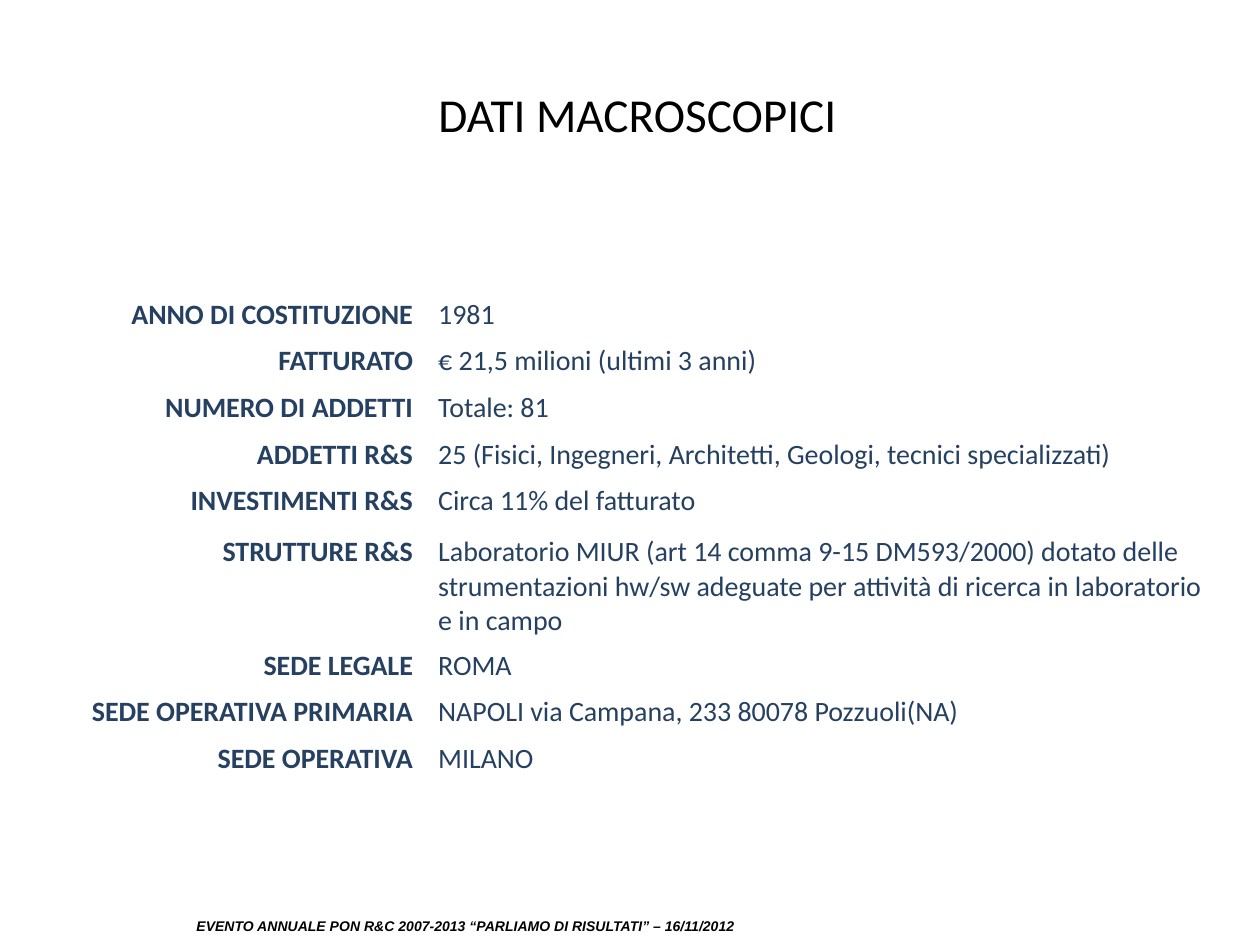
"""Build the slide with the company's headline data."""
from pptx import Presentation
from pptx.dml.color import RGBColor
from pptx.enum.text import MSO_ANCHOR, MSO_AUTO_SIZE, PP_ALIGN
from pptx.util import Cm, Pt

LEFT, RIGHT = PP_ALIGN.LEFT, PP_ALIGN.RIGHT
TOP, MIDDLE = MSO_ANCHOR.TOP, MSO_ANCHOR.MIDDLE
FIT_SHAPE = MSO_AUTO_SIZE.SHAPE_TO_FIT_TEXT

COLORS = {"text": "000000", "table": "254061"}
COLUMN_WIDTHS = (7.49, 16.13)
ROW_HEIGHT = 0.94
TALL_ROW, TALL_HEIGHT = 4, 1.03
COMPANY_DATA = [
    ("ANNO DI COSTITUZIONE", "1981"),
    ("FATTURATO", "€ 21,5 milioni (ultimi 3 anni)"),
    ("NUMERO DI ADDETTI", "Totale: 81"),
    ("ADDETTI R&S", "25 (Fisici, Ingegneri, Architetti, Geologi, tecnici specializzati)"),
    ("INVESTIMENTI R&S", "Circa 11% del fatturato"),
    ("STRUTTURE R&S", "Laboratorio MIUR (art 14 comma 9-15 DM593/2000) dotato delle "
     "strumentazioni hw/sw adeguate per attività di ricerca in laboratorio e in campo"),
    ("SEDE LEGALE", "ROMA"),
    ("SEDE OPERATIVA PRIMARIA", "NAPOLI via Campana, 233 80078 Pozzuoli(NA)"),
    ("SEDE OPERATIVA", "MILANO"),
]


def add_run(paragraph, text, size, color, font="Calibri", bold=False, italic=False):
    """Append a formatted run to a paragraph."""
    run = paragraph.add_run()
    run.text = text
    run.font.name = font
    run.font.size = Pt(size)
    run.font.bold = bold
    run.font.italic = italic
    run.font.color.rgb = RGBColor.from_string(COLORS[color])


def add_text_box(slide, left, top, width, height, anchor=TOP):
    """Add a wrapping text box and return its text frame."""
    shape = slide.shapes.add_textbox(Cm(left), Cm(top), Cm(width), Cm(height))
    text_frame = shape.text_frame
    text_frame.word_wrap = True
    text_frame.vertical_anchor = anchor
    return text_frame


def add_title(slide):
    """Add the slide title."""
    text_frame = add_text_box(slide, 8.59, 1.55, 9.8, 1.5, MIDDLE)
    add_run(text_frame.paragraphs[0], "DATI MACROSCOPICI", 27, "text")


def add_footer(slide):
    """Add the event line at the bottom."""
    text_frame = add_text_box(slide, 3.71, 18.36, 11.91, 0.61)
    text_frame.auto_size = FIT_SHAPE
    paragraph = text_frame.paragraphs[0]
    paragraph.line_spacing = Pt(10)
    add_run(paragraph, "EVENTO ANNUALE PON R&C 2007-2013 “PARLIAMO DI RISULTATI” – 16/11/2012",
            8, "text", "Arial", bold=True, italic=True)


def fill_cell(cell, text, alignment, bold):
    """Write one table cell without a background."""
    cell.fill.background()
    paragraph = cell.text_frame.paragraphs[0]
    paragraph.alignment = alignment
    add_run(paragraph, text, 16, "table", bold=bold)


def add_data_table(slide):
    """Add the two-column table of labels and values."""
    row_count = len(COMPANY_DATA)
    table = slide.shapes.add_table(
        row_count, len(COLUMN_WIDTHS), Cm(1.09), Cm(5.87),
        Cm(sum(COLUMN_WIDTHS)), Cm(row_count * ROW_HEIGHT)).table
    table.first_row = False
    table.horz_banding = False
    for column, width in zip(table.columns, COLUMN_WIDTHS):
        column.width = Cm(width)
    for index, (label, value) in enumerate(COMPANY_DATA):
        table.rows[index].height = Cm(TALL_HEIGHT if index == TALL_ROW else ROW_HEIGHT)
        fill_cell(table.cell(index, 0), label, RIGHT, True)
        fill_cell(table.cell(index, 1), value, LEFT, False)


def main():
    """Create the presentation and save it."""
    presentation = Presentation()
    presentation.slide_width = Cm(25.4)
    presentation.slide_height = Cm(19.05)
    slide = presentation.slides.add_slide(presentation.slide_layouts[6])
    add_footer(slide)
    add_title(slide)
    add_data_table(slide)
    presentation.save("out.pptx")


if __name__ == "__main__":
    main()
